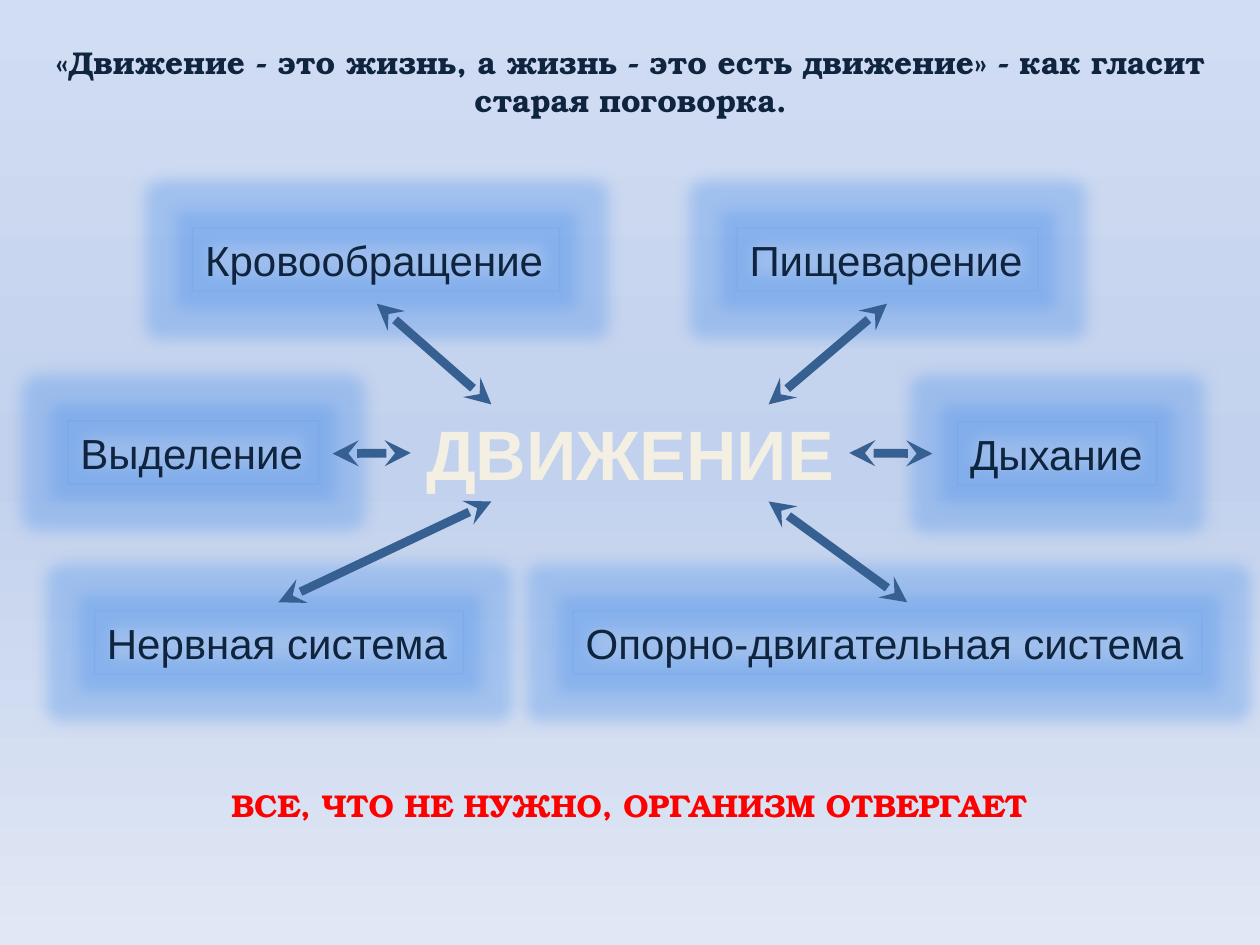
from lxml import etree
from pptx import Presentation
from pptx.dml.color import RGBColor
from pptx.enum.shapes import MSO_CONNECTOR, MSO_SHAPE
from pptx.enum.text import MSO_ANCHOR, MSO_AUTO_SIZE, PP_ALIGN
from pptx.oxml.ns import qn
from pptx.util import Inches, Pt

RECTANGLE = MSO_SHAPE.RECTANGLE
STRAIGHT = MSO_CONNECTOR.STRAIGHT
LEFT, CENTER = PP_ALIGN.LEFT, PP_ALIGN.CENTER
TOP = MSO_ANCHOR.TOP
GROW = MSO_AUTO_SIZE.SHAPE_TO_FIT_TEXT
LEFT_SIDE, RIGHT_SIDE = 1, 3

COLORS = {
    "ink": "0F243E",
    "alert": "FF0000",
    "cream": "F3EFE3",
    "outline": "4F81BD",
    "glow": "609CEB",
    "arrow": "376092",
}
BACKGROUND_STOPS = [(0, "D1DDF3"), (50, "C2D1ED"), (100, "E1E8F5")]
SERIF, SANS = "TeX Gyre Bonum", "Arial"

BOX_HEIGHT = 0.5
SYSTEMS = [
    ("Кровообращение", 1.53, 1.81, 2.91),
    ("Пищеварение", 5.85, 1.81, 2.39),
    ("Выделение", 0.54, 3.34, 1.99),
    ("Дыхание", 7.6, 3.35, 1.58),
    ("Нервная система", 0.75, 4.85, 2.93),
    ("Опорно-двигательная система", 4.55, 4.85, 4.99),
]
HUB = (3.26, 3.21, 3.48, 0.77)
DIAGONAL_ARROWS = [
    ((3.9, 3.21), (2.99, 2.41)),
    ((6.1, 3.21), (7.04, 2.41)),
    ((3.9, 3.98), (2.21, 4.78)),
    ((6.1, 3.98), (7.2, 4.78)),
]
ARROW_MIDDLE = 3.6
SIDE_ARROWS = [(LEFT_SIDE, 3.26, 2.64), (RIGHT_SIDE, 6.74, 7.4)]


def add_color(parent, value, alpha=None):
    """Append an srgbClr element, with its opacity in percent if given."""
    color = etree.SubElement(parent, qn("a:srgbClr"), val=value)
    if alpha is not None:
        etree.SubElement(color, qn("a:alpha"), val=str(alpha * 1000))


class SlideBuilder:
    """Holds the slide being drawn and the shared style."""

    def __init__(self, page):
        self.page = page

    def background(self, stops):
        fill = self.page.background.fill
        fill.gradient()
        fill.gradient_angle = 270
        stop_list = next(self.page.element.iter(qn("a:gsLst")))
        for stop in list(stop_list):
            stop_list.remove(stop)
        for position, value in stops:
            stop = etree.SubElement(stop_list, qn("a:gs"), pos=str(position * 1000))
            add_color(stop, value)

    def add_text(self, shape, text, size, color, font, bold=False, align=CENTER, wrap=True):
        frame = shape.text_frame
        frame.word_wrap = wrap
        frame.auto_size = GROW
        frame.vertical_anchor = TOP
        para = frame.paragraphs[0]
        para.alignment = align
        span = para.add_run()
        span.text = text
        span.font.name = font
        span.font.size = Pt(size)
        span.font.bold = bold
        span.font.color.rgb = RGBColor.from_string(COLORS[color])

    def caption(self, text, place, size, color, font, wrap=True):
        box = self.page.shapes.add_textbox(*map(Inches, place))
        self.add_text(box, text, size, color, font, bold=True, wrap=wrap)
        return box

    def glowing_box(self, text, left, top, width):
        place = (left, top, width, BOX_HEIGHT)
        box = self.page.shapes.add_shape(RECTANGLE, *map(Inches, place))
        box.fill.background()
        box.line.width = Pt(0.75)
        box.line.color.rgb = RGBColor.from_string(COLORS["outline"])
        line_color = next(box.get_or_add_ln().iter(qn("a:srgbClr")))
        etree.SubElement(line_color, qn("a:alpha"), val="11000")
        box.shadow.inherit = False
        effects = box.element.spPr.find(qn("a:effectLst"))
        glow = etree.SubElement(effects, qn("a:glow"), rad=str(Inches(0.25)))
        add_color(glow, COLORS["glow"], alpha=40)
        self.add_text(box, text, 24, "ink", SANS, align=LEFT, wrap=False)

    def arrow(self, start, end):
        """Draw a double-headed arrow."""
        arrow = self.page.shapes.add_connector(STRAIGHT, *map(Inches, start + end))
        arrow.line.width = Pt(5)
        arrow.line.color.rgb = RGBColor.from_string(COLORS["arrow"])
        for tag in ("a:headEnd", "a:tailEnd"):
            etree.SubElement(arrow.get_or_add_ln(), qn(tag), type="stealth")
        etree.SubElement(arrow.element.spPr, qn("a:effectLst"))
        return arrow


def main():
    deck = Presentation()
    deck.slide_width, deck.slide_height = Inches(10), Inches(7.5)
    builder = SlideBuilder(deck.slides.add_slide(deck.slide_layouts[6]))
    builder.background(BACKGROUND_STOPS)

    builder.caption(
        "«Движение - это жизнь, а жизнь - это есть движение» - как гласит старая поговорка.",
        (0.28, 0.29, 9.45, 0.71), 18, "ink", SERIF)
    for system in SYSTEMS:
        builder.glowing_box(*system)
    hub = builder.caption("ДВИЖЕНИЕ", HUB, 40, "cream", SANS, wrap=False)
    builder.caption("ВСЕ, ЧТО НЕ НУЖНО, ОРГАНИЗМ ОТВЕРГАЕТ",
                    (0.27, 6.19, 9.45, 0.4), 18, "alert", SERIF)

    for start, end in DIAGONAL_ARROWS:
        builder.arrow(start, end)
    for side, inner, outer in SIDE_ARROWS:
        arrow = builder.arrow((inner, ARROW_MIDDLE), (outer, ARROW_MIDDLE))
        arrow.begin_connect(hub, side)

    deck.save("out.pptx")


if __name__ == "__main__":
    main()
